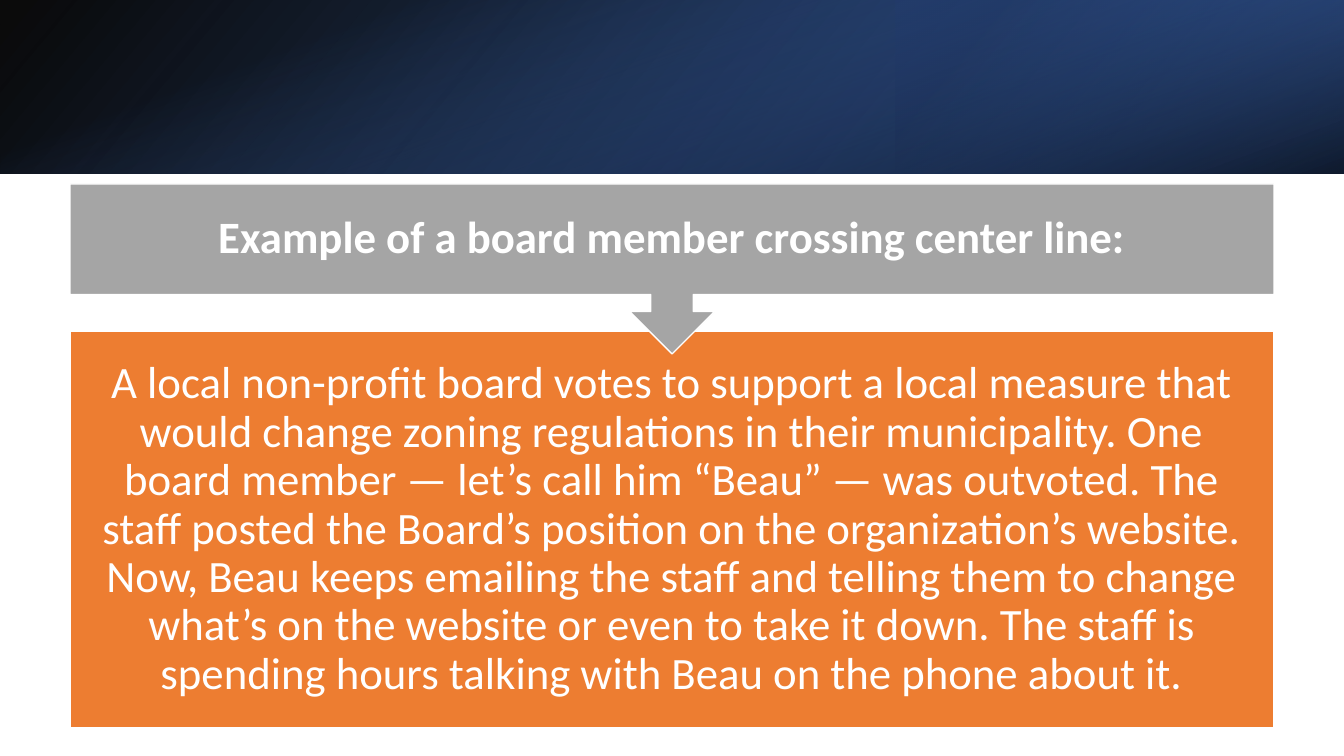
from lxml import etree
from pptx import Presentation
from pptx.dml.color import RGBColor
from pptx.enum.shapes import MSO_SHAPE
from pptx.enum.text import MSO_ANCHOR, MSO_AUTO_SIZE, PP_ALIGN
from pptx.oxml.ns import qn
from pptx.util import Pt

RECTANGLE = MSO_SHAPE.RECTANGLE
CALLOUT = MSO_SHAPE.UP_ARROW_CALLOUT
MIDDLE = MSO_ANCHOR.MIDDLE
CENTER = PP_ALIGN.CENTER
NO_AUTOFIT = MSO_AUTO_SIZE.NONE
TITLE_ONLY = 5

WHITE = RGBColor(0xFF, 0xFF, 0xFF)
BLACK = RGBColor(0x00, 0x00, 0x00)
ORANGE = RGBColor(0xED, 0x7D, 0x31)
GRAY = RGBColor(0xA5, 0xA5, 0xA5)
BLUE = RGBColor(0x44, 0x72, 0xC4)
MID_BLUE = RGBColor(0x2F, 0x55, 0x97)
NAVY = RGBColor(0x20, 0x38, 0x64)

PAGE_WIDTH, PAGE_HEIGHT = 1344, 756
BANNER_HEIGHT = 174
MARGIN = 70
PANEL_WIDTH = PAGE_WIDTH - 2 * MARGIN

HEADING = "Example of a board member crossing center line:"
STORY = (
    "A local non-profit board votes to support a local measure that would change "
    "zoning regulations in their municipality. One board member — let’s call him "
    "“Beau” — was outvoted. The staff posted the Board’s position on the "
    "organization’s website. Now, Beau keeps emailing the staff and telling them to "
    "change what’s on the website or even to take it down. The staff is spending "
    "hours talking with Beau on the phone about it."
)


def px(length):
    return round(length * 914400 / 100.8)


def write_text(box, text, *, size=32, color=WHITE, bold=False, font="Calibri", inset=25):
    frame = box.text_frame
    frame.word_wrap = True
    frame.auto_size = NO_AUTOFIT
    frame.vertical_anchor = MIDDLE
    frame.margin_left = frame.margin_right = px(inset)
    frame.margin_top = frame.margin_bottom = px(inset)
    para = frame.paragraphs[0]
    para.alignment = CENTER
    para.line_spacing = 0.9
    span = para.add_run()
    span.text = text
    span.font.name = font
    span.font.size = Pt(size)
    span.font.bold = bold
    span.font.color.rgb = color


class Slide:
    def __init__(self, deck):
        self.page = deck.slides.add_slide(deck.slide_layouts[TITLE_ONLY])

    def panel(self, kind, left, top, width, height, fill=None, line=None, rotation=0):
        box = self.page.shapes.add_shape(kind, px(left), px(top), px(width), px(height))
        box.shadow.inherit = False
        box.rotation = rotation
        if fill is not None:
            box.fill.solid()
            box.fill.fore_color.rgb = fill
        if line is None:
            box.line.fill.background()
        else:
            box.line.color.rgb = line
            box.line.width = Pt(1)
        return box

    def gradient(self, left, top, width, height, stops, angle, rotation=0, flip=False):
        box = self.panel(RECTANGLE, left, top, width, height, rotation=rotation)
        box.fill.gradient()
        properties = box.element.spPr
        if flip:
            properties.find(qn("a:xfrm")).set("flipH", "1")
        gradient = properties.find(qn("a:gradFill"))
        for child in list(gradient):
            gradient.remove(child)
        stop_list = etree.SubElement(gradient, qn("a:gsLst"))
        for position, color, opacity in stops:
            stop = etree.SubElement(stop_list, qn("a:gs"), pos=str(position * 1000))
            tint = etree.SubElement(stop, qn("a:srgbClr"), val=str(color))
            etree.SubElement(tint, qn("a:alpha"), val=str(opacity * 1000))
        etree.SubElement(gradient, qn("a:lin"), ang=str(angle * 60000), scaled="0")

    def title(self, text, left, top, width, height):
        box = self.page.shapes.title
        box.left, box.top = px(left), px(top)
        box.width, box.height = px(width), px(height)
        write_text(box, text, bold=True)
        box.element.getparent().append(box.element)


def main():
    deck = Presentation()
    deck.slide_width, deck.slide_height = px(PAGE_WIDTH), px(PAGE_HEIGHT)
    slide = Slide(deck)

    slide.gradient(0, 0, PAGE_WIDTH, BANNER_HEIGHT,
                   [(0, BLACK, 96), (100, MID_BLUE, 100)], 140, flip=True)
    slide.gradient(PAGE_WIDTH * 2 // 3, 0, PAGE_WIDTH // 3, BANNER_HEIGHT,
                   [(19, NAVY, 68), (100, BLUE, 79)], 320, rotation=180, flip=True)
    offset = (PAGE_WIDTH - BANNER_HEIGHT) // 2
    slide.gradient(offset, -offset, BANNER_HEIGHT, PAGE_WIDTH,
                   [(23, BLUE, 0), (99, BLACK, 74)], 340, rotation=90)

    story = slide.panel(RECTANGLE, MARGIN, 331, PANEL_WIDTH, 397, ORANGE, WHITE)
    write_text(story, STORY)
    slide.panel(CALLOUT, MARGIN, 184, PANEL_WIDTH, 170, GRAY, WHITE, rotation=180)
    slide.title(HEADING, MARGIN, 184, PANEL_WIDTH, 110)

    deck.save("out.pptx")


if __name__ == "__main__":
    main()
